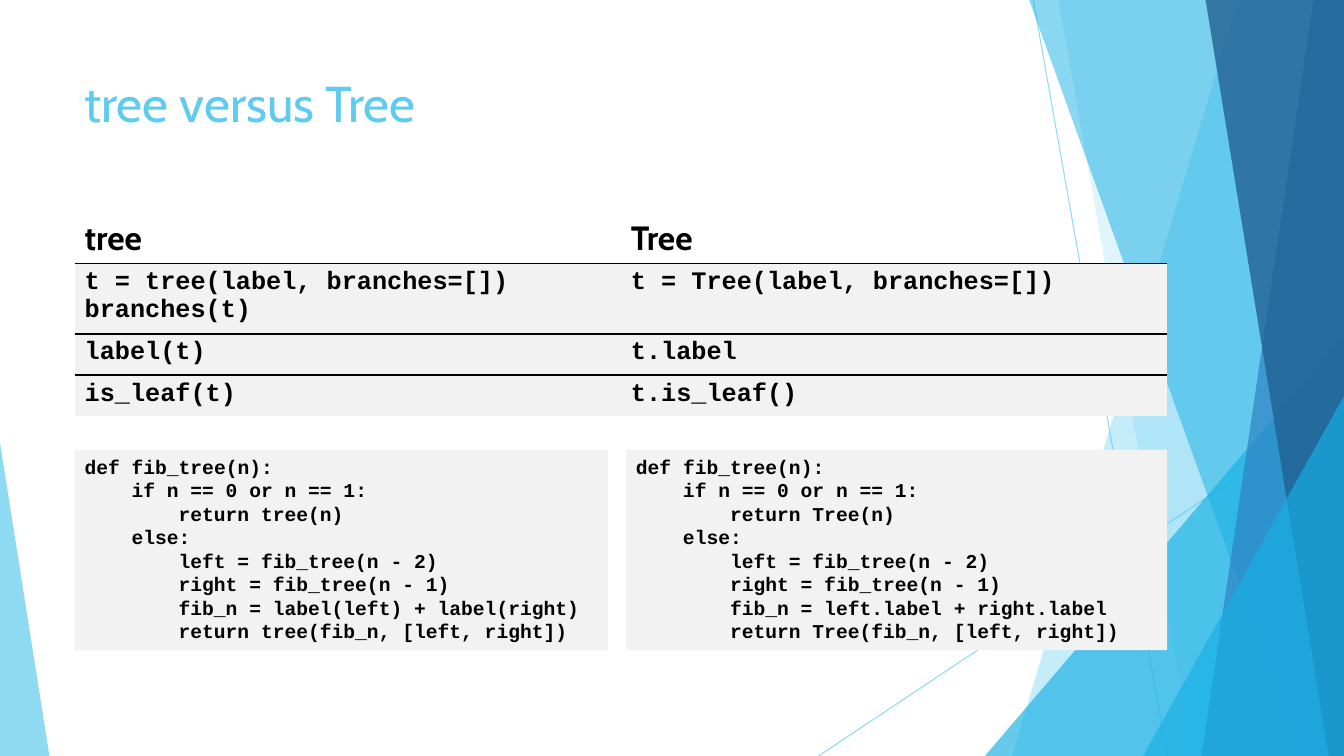
from lxml.etree import SubElement
from pptx import Presentation
from pptx.dml.color import RGBColor
from pptx.enum.shapes import MSO_CONNECTOR, MSO_SHAPE
from pptx.enum.text import MSO_ANCHOR
from pptx.oxml import parse_xml
from pptx.oxml.ns import nsdecls, qn
from pptx.util import Inches, Pt

SKY, CYAN, BLUE, NAVY = "5FCBEF", "17B0E4", "2E83C3", "226292"
BLACK, PALE = "000000", "F2F2F2"
HEADING, CODE = "Cabin", "Courier New"
PLAIN_TABLE = "{2D5ABB26-0587-4C30-8999-92F81FD0307C}"
LEFT, RIGHT = 5.55, 86.85
CODE_TOP, CODE_HEIGHT = 59.47, 26.53

FACETS = [
    ("band", 92.1, 75.3, SKY, 36),
    ("band", 78.75, 88.73, SKY, 20),
    ("triangle", 73.28, 44.4, 26.72, 1, CYAN, 66),
    ("band", 76.58, 96.83, CYAN, 50),
    ("band", 97.73, 89.4, BLUE, 70),
    ("band", 89.7, 98.85, NAVY, 80),
    ("triangle", 85.05, 52.4, 14.95, 1, CYAN, 66),
    ("triangle", 0, 58.53, 3.68, 0, SKY, 70),
]

ROWS = [
    ("tree", "Tree"),
    ("t = tree(label, branches=[])\nbranches(t)", "t = Tree(label, branches=[])"),
    ("label(t)", "t.label"),
    ("is_leaf(t)", "t.is_leaf()"),
]
ROW_HEIGHTS = [6.67, 8.93, 5.47, 5.47]
RULE_WIDTHS = [1, 1.5, 1]

FIB_TREE = """def fib_tree(n):
    if n == 0 or n == 1:
        return {name}(n)
    else:
        left = fib_tree(n - 2)
        right = fib_tree(n - 1)
        fib_n = {total}
        return {name}(fib_n, [left, right])"""


def color(hex_string):
    return RGBColor.from_string(hex_string)


def set_alpha(fill_format, percent):
    tone = fill_format._xPr.find(f".//{qn('a:srgbClr')}")
    SubElement(tone, qn("a:alpha")).set("val", str(percent * 1000))


def write(frame, text, *, size, font, tone=BLACK, bold=False):
    frame.word_wrap = True
    frame.vertical_anchor = MSO_ANCHOR.TOP
    indent_step = Pt(size * 0.6)
    for number, line in enumerate(text.split("\n")):
        para = frame.add_paragraph() if number else frame.paragraphs[0]
        words = line.lstrip()
        properties = para._p.get_or_add_pPr()
        properties.set("algn", "l")
        properties.set("marL", str(indent_step * (len(line) - len(words))))
        properties.set("indent", "0")
        span = para.add_run()
        span.text = words
        span.font.size = Pt(size)
        span.font.name = font
        span.font.bold = bold
        span.font.color.rgb = color(tone)


class Page:
    """Draws styled elements on one slide, with lengths in percent of its size."""

    def __init__(self, deck):
        self.width, self.height = deck.slide_width, deck.slide_height
        self.shapes = deck.slides.add_slide(deck.slide_layouts[6]).shapes

    def across(self, share):
        return round(self.width * share / 100)

    def down(self, share):
        return round(self.height * share / 100)

    def area(self, left, top, width, height):
        return self.across(left), self.down(top), self.across(width), self.down(height)

    def paint(self, shape, tone, alpha=100):
        shape.shadow.inherit = False
        shape.line.fill.background()
        shape.fill.solid()
        shape.fill.fore_color.rgb = color(tone)
        if alpha < 100:
            set_alpha(shape.fill, alpha)

    def line(self, left, top, right, bottom):
        connector = self.shapes.add_connector(
            MSO_CONNECTOR.STRAIGHT,
            self.across(left), self.down(top), self.across(right), self.down(bottom))
        connector.line.width = Pt(0.75)
        connector.line.color.rgb = color(SKY)
        set_alpha(connector.line.fill, 70)
        SubElement(connector._element.spPr, qn("a:effectLst"))

    def band(self, top_left, bottom_left, tone, alpha):
        builder = self.shapes.build_freeform(self.across(top_left), 0)
        builder.add_line_segments([
            (self.width, 0), (self.width, self.height),
            (self.across(bottom_left), self.height)])
        self.paint(builder.convert_to_shape(), tone, alpha)

    def triangle(self, left, top, width, apex, tone, alpha):
        shape = self.shapes.add_shape(
            MSO_SHAPE.ISOSCELES_TRIANGLE, *self.area(left, top, width, 100 - top))
        shape.adjustments[0] = apex
        self.paint(shape, tone, alpha)

    def title(self, text):
        box = self.shapes.add_textbox(*self.area(LEFT, 8.93, 70.5, 19.2))
        write(box.text_frame, text, size=36, font=HEADING, tone=SKY)

    def code(self, left, right, text):
        box = self.shapes.add_shape(
            MSO_SHAPE.RECTANGLE, *self.area(left, CODE_TOP, right - left, CODE_HEIGHT))
        self.paint(box, PALE)
        write(box.text_frame, text, size=14, font=CODE, bold=True)

    def rule(self, cell, side, width):
        cell._tc.get_or_add_tcPr().insert(0, parse_xml(
            f'<a:ln{side} {nsdecls("a")} w="{Pt(width)}"><a:solidFill>'
            f'<a:srgbClr val="{BLACK}"/></a:solidFill></a:ln{side}>'))

    def table(self, rows):
        frame = self.shapes.add_table(
            len(rows), 2, *self.area(LEFT, 28.13, RIGHT - LEFT, sum(ROW_HEIGHTS)))
        table = frame.table
        table.first_row = table.horz_banding = False
        table._tbl.tblPr.find(qn("a:tableStyleId")).text = PLAIN_TABLE
        for row, (texts, height) in enumerate(zip(rows, ROW_HEIGHTS)):
            table.rows[row].height = self.down(height)
            for column, text in enumerate(texts):
                cell = table.cell(row, column)
                if row:
                    cell.fill.solid()
                    cell.fill.fore_color.rgb = color(PALE)
                    write(cell.text_frame, text, size=18, font=CODE, bold=True)
                else:
                    cell.fill.background()
                    write(cell.text_frame, text, size=24, font=HEADING, bold=True)
                if row < len(RULE_WIDTHS):
                    self.rule(cell, "B", RULE_WIDTHS[row])
                if row:
                    self.rule(cell, "T", RULE_WIDTHS[row - 1])


def main():
    deck = Presentation()
    deck.slide_width, deck.slide_height = Inches(13.33), Inches(7.5)
    page = Page(deck)
    page.line(76.88, 0, 86.85, 100)
    page.line(100, 53.73, 60.9, 100)
    draw = {"band": page.band, "triangle": page.triangle}
    for kind, *details in FACETS:
        draw[kind](*details)
    page.title("tree versus Tree")
    page.table(ROWS)
    page.code(LEFT, 45.23, FIB_TREE.format(name="tree", total="label(left) + label(right)"))
    page.code(46.58, RIGHT, FIB_TREE.format(name="Tree", total="left.label + right.label"))
    deck.save("out.pptx")


if __name__ == "__main__":
    main()
